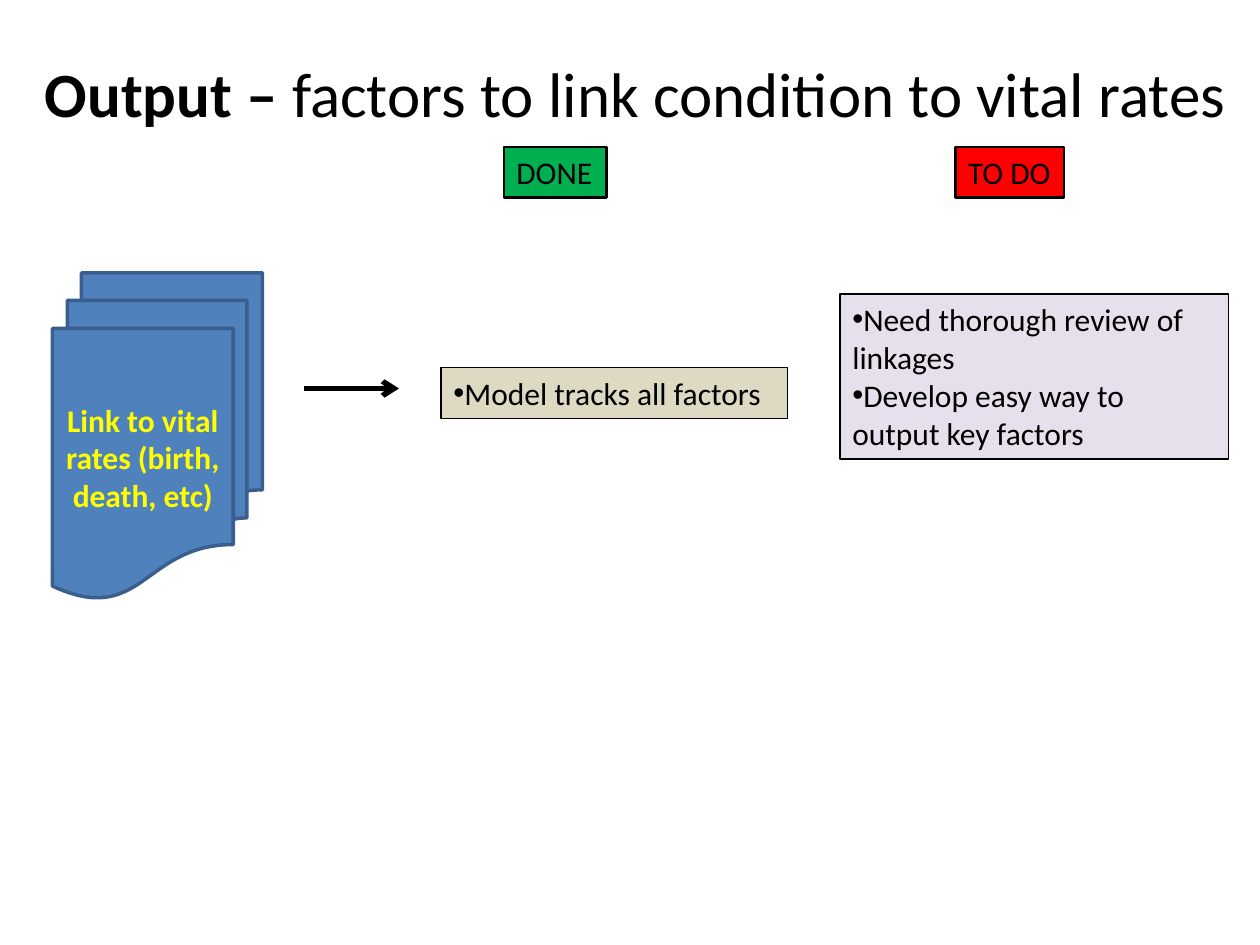
from lxml import etree
from pptx import Presentation
from pptx.dml.color import RGBColor
from pptx.enum import shapes, text
from pptx.oxml.ns import qn
from pptx.util import Pt

COLORS = {"black": "000000", "blue": "4F81BD", "navy": "3A5F8C", "yellow": "FFFF00",
          "green": "00B050", "red": "FF0000", "tan": "DDD9C3", "lilac": "E6E0EC"}
LABELS = [("DONE", (288, 84, 58.5, 29), "green"),
          ("TO DO", (546, 84, 62, 29), "red")]
NOTES = [(["Model tracks all factors"], (252, 210, 198, 29), "tan", 0.75),
         (["Need thorough review of linkages", "Develop easy way to output key factors"],
          (480, 168, 222, 94.5), "lilac", 1)]


def rgb(name):
    """Return the named colour."""
    return RGBColor.from_string(COLORS[name])


def set_font(font, color="black", **values):
    """Set the colour and format values of a font."""
    font.color.rgb = rgb(color)
    for key, value in {"name": "Calibri", "size": Pt(18), **values}.items():
        setattr(font, key, value)


def add_title(s, box, lead, rest):
    """Place the title with a bold lead."""
    sp = s.shapes.title
    for key, value in zip(("left", "top", "width", "height"), box):
        setattr(sp, key, Pt(value))
    tf = sp.text_frame
    tf.auto_size = text.MSO_AUTO_SIZE.NONE
    tf.vertical_anchor = text.MSO_ANCHOR.MIDDLE
    p = tf.paragraphs[0]
    p.alignment = text.PP_ALIGN.CENTER
    for words, bold in ((lead, True), (rest, False)):
        r = p.add_run()
        r.text = words
        set_font(r.font, size=Pt(36), bold=bold)


def add_block(s, box, lines, fill, line="black", weight=1.5, kind="RECTANGLE",
              align="LEFT", anchor="TOP", wrap=True, bullet=False, **font):
    """Place a filled, outlined shape with its paragraphs."""
    sp = s.shapes.add_shape(getattr(shapes.MSO_SHAPE, kind), *map(Pt, box))
    sp.shadow.inherit = False
    sp.fill.solid()
    sp.fill.fore_color.rgb = rgb(fill)
    sp.line.color.rgb = rgb(line)
    sp.line.width = Pt(weight)
    tf = sp.text_frame
    tf.word_wrap = wrap
    tf.vertical_anchor = getattr(text.MSO_ANCHOR, anchor)
    if kind == "RECTANGLE":
        tf.auto_size = text.MSO_AUTO_SIZE.SHAPE_TO_FIT_TEXT
    for i, words in enumerate(lines):
        p = tf.add_paragraph() if i else tf.paragraphs[0]
        p.alignment = getattr(text.PP_ALIGN, align)
        if bullet:
            pPr = p._p.get_or_add_pPr()
            etree.SubElement(pPr, qn("a:buFont")).set("typeface", "Arial")
            etree.SubElement(pPr, qn("a:buChar")).set("char", "•")
        r = p.add_run()
        r.text = words
        set_font(r.font, **font)


def add_arrow(s, left, top, length):
    """Draw a horizontal arrow pointing right."""
    c = s.shapes.add_connector(shapes.MSO_CONNECTOR.STRAIGHT,
                               Pt(left), Pt(top), Pt(left + length), Pt(top))
    c.line.color.rgb = rgb("black")
    c.line.width = Pt(3)
    etree.SubElement(c.line._get_or_add_ln(), qn("a:tailEnd")).set("type", "arrow")
    etree.SubElement(c._element.spPr, qn("a:effectLst"))


def main():
    """Build and save the slide."""
    prs = Presentation()
    prs.slide_width, prs.slide_height = Pt(720), Pt(540)
    s = prs.slides.add_slide(prs.slide_layouts[5])
    add_title(s, (18, 12, 690, 81), "Output – ", "factors to link condition to vital rates")
    add_block(s, (30, 156, 120, 186), ["Link to vital rates (birth, death, etc)"], "blue",
              line="navy", weight=2, kind="FLOWCHART_MULTIDOCUMENT", align="CENTER",
              anchor="MIDDLE", color="yellow", bold=True)
    add_arrow(s, 174, 222, 54)
    for label, box, fill in LABELS:
        add_block(s, box, [label], fill, wrap=False)
    for lines, box, fill, weight in NOTES:
        add_block(s, box, lines, fill, weight=weight, bullet=True)
    prs.save("out.pptx")


if __name__ == "__main__":
    main()
